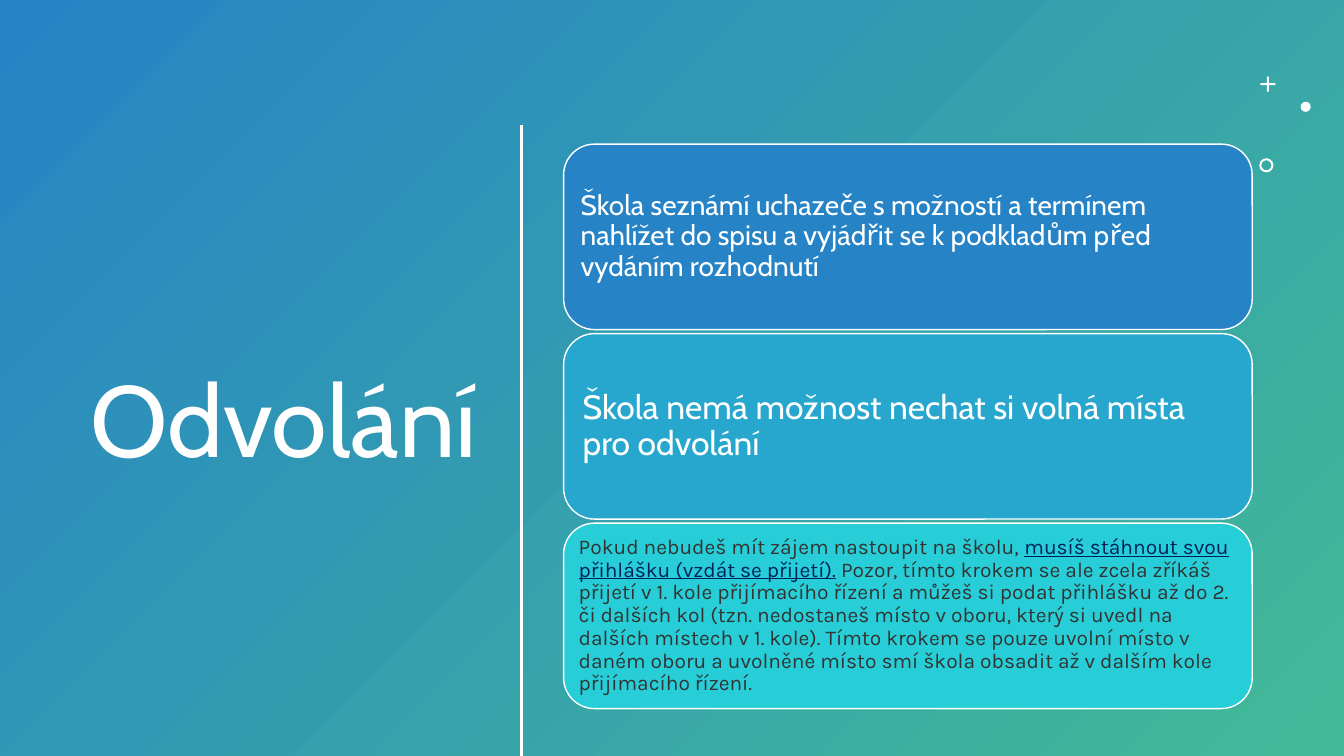
import dataclasses
import pptx
import pptx.dml.color
import pptx.enum.shapes
import pptx.enum.text
import pptx.util

In = pptx.util.Inches
Pt = pptx.util.Pt
Shape = pptx.enum.shapes.MSO_SHAPE
Align = pptx.enum.text.PP_ALIGN
Anchor = pptx.enum.text.MSO_ANCHOR


@dataclasses.dataclass(frozen=True)
class Theme:
    white: str = "FFFFFF"
    blue: str = "2683C6"
    sky: str = "27A7CE"
    aqua: str = "27CED7"
    green: str = "42BA97"
    dark: str = "333333"
    navy: str = "002060"
    head: str = "Cabin"
    body: str = "Karla"
    title: int = 72
    large: int = 24
    mid: int = 20
    small: int = 15


LOOK = Theme()
WIDE, HIGH = 13.33, 7.5

# Each card: fill, font, size, text colour, inset, runs as (text, linked look)
CARDS = [
    (LOOK.blue, LOOK.head, LOOK.mid, LOOK.white, 0.08, [
        ("Škola seznámí uchazeče s možností a termínem nahlížet do spisu "
         "a vyjádřit se k podkladům před vydáním rozhodnutí", False)]),
    (LOOK.sky, LOOK.head, LOOK.large, LOOK.white, 0.1, [
        ("Škola nemá možnost nechat si volná místa pro odvolání", False)]),
    (LOOK.aqua, LOOK.body, LOOK.small, LOOK.dark, 0.06, [
        ("Pokud nebudeš mít zájem nastoupit na školu, ", False),
        ("musíš stáhnout svou přihlášku (vzdát se přijetí).", True),
        (" Pozor, tímto krokem se ale zcela zříkáš přijetí v 1. kole "
         "přijímacího řízení a můžeš si podat přihlášku až do 2. či dalších "
         "kol (tzn. nedostaneš místo v oboru, který si uvedl na dalších "
         "místech v 1. kole). Tímto krokem se pouze uvolní místo v daném "
         "oboru a uvolněné místo smí škola obsadit až v dalším kole "
         "přijímacího řízení.", False)]),
]


def tint(code):
    return pptx.dml.color.RGBColor.from_string(code)


def draw(slide, kind, box, fill, line=None):
    """Add a flat preset shape in box (left, top, width, height)."""
    shape = slide.shapes.add_shape(kind, *map(In, box))
    shape.shadow.inherit = False
    if fill:
        shape.fill.solid()
        shape.fill.fore_color.rgb = tint(fill)
    if line:
        shape.line.color.rgb = tint(line)
        shape.line.width = Pt(1)
    else:
        shape.line.fill.background()
    return shape


def write(shape, runs, face, size, color, align, inset):
    """Fill a shape with one paragraph, centred vertically."""
    frame = shape.text_frame
    frame.word_wrap = True
    frame.vertical_anchor = Anchor.MIDDLE
    frame.margin_left = frame.margin_right = In(inset)
    frame.margin_top = frame.margin_bottom = In(inset)
    para = frame.paragraphs[0]
    para.alignment = align
    para.line_spacing = 0.9
    para.font.name = face
    para.font.size = Pt(size)
    for text, linked in runs:
        run = para.add_run()
        run.text = text
        run.font.name = face
        run.font.size = Pt(size)
        run.font.color.rgb = tint(LOOK.navy if linked else color)
        if linked:
            run.font.underline = True


def back(slide, box):
    """Diagonal gradient over the whole slide."""
    fill = draw(slide, Shape.RECTANGLE, box, None).fill
    fill.gradient()
    fill.gradient_angle = 315
    for stop, code in zip(fill.gradient_stops, (LOOK.blue, LOOK.green)):
        stop.color.rgb = tint(code)


def title(slide, box):
    """Right-aligned heading."""
    area = slide.shapes.add_textbox(*map(In, box))
    write(area, [("Odvolání", False)], LOOK.head, LOOK.title, LOOK.white,
          Align.RIGHT, 0.1)


def rule(slide, box):
    """Upright line along the left edge of the box."""
    left, top, _, high = box
    line = slide.shapes.add_connector(
        pptx.enum.shapes.MSO_CONNECTOR.STRAIGHT,
        In(left), In(top), In(left), In(top + high))
    line.line.color.rgb = tint(LOOK.white)
    line.line.width = Pt(2)
    props = line.element.spPr
    props.append(pptx.oxml.parse_xml(
        '<a:effectLst xmlns:a='
        '"http://schemas.openxmlformats.org/drawingml/2006/main"/>'))


def marks(slide, box):
    """Plus, dot and ring, placed in the box's corners."""
    left, top, wide, high = box
    plus, dot, ring = 0.15, 0.1, 0.14
    cross = draw(slide, Shape.CROSS, (left + 0.01, top, plus, plus), LOOK.white)
    cross.adjustments[0] = 0.43
    draw(slide, Shape.OVAL, (left + wide - dot, top + 0.25, dot, dot),
         LOOK.white)
    hoop = draw(slide, Shape.DONUT, (left, top + high - ring, ring, ring),
                LOOK.white)
    hoop.adjustments[0] = 0.14


def cards(slide, box):
    """Equal rounded cards stacked in the box."""
    left, top, wide, high = box
    gap = 0.04
    tall = (high - gap * (len(CARDS) - 1)) / len(CARDS)
    for row, (fill, face, size, color, inset, runs) in enumerate(CARDS):
        card = draw(slide, Shape.ROUNDED_RECTANGLE,
                    (left, top + row * (tall + gap), wide, tall),
                    fill, LOOK.white)
        write(card, runs, face, size, color, Align.LEFT, inset)


def main():
    deck = pptx.Presentation()
    deck.slide_width, deck.slide_height = In(WIDE), In(HIGH)
    slide = deck.slides.add_slide(deck.slide_layouts[6])
    back(slide, (0, 0, WIDE, HIGH))
    title(slide, (0.52, 1.16, 4.31, 6.11))
    rule(slide, (5.17, 1.24, 0, HIGH - 1.24))
    marks(slide, (12.49, 0.76, 0.51, 0.95))
    cards(slide, (5.59, 1.43, 6.83, 5.6))
    deck.save("out.pptx")


if __name__ == "__main__":
    main()
